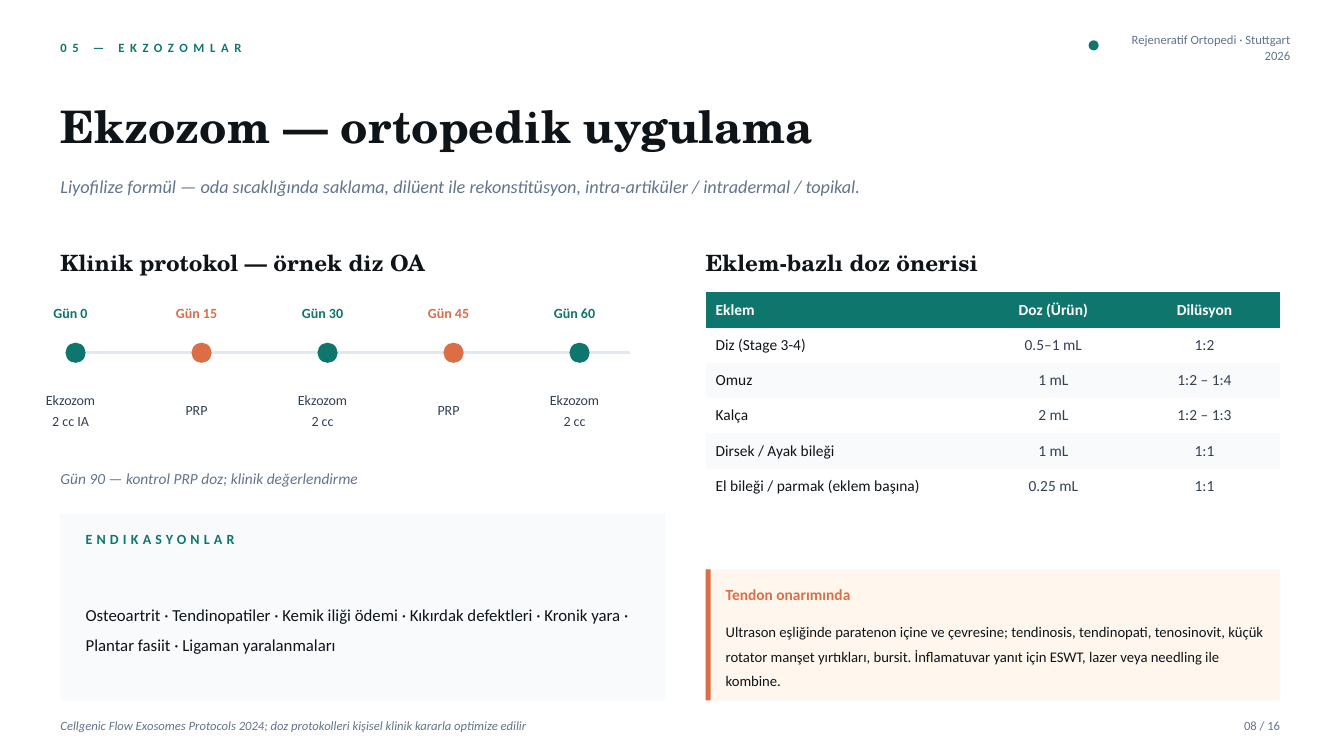
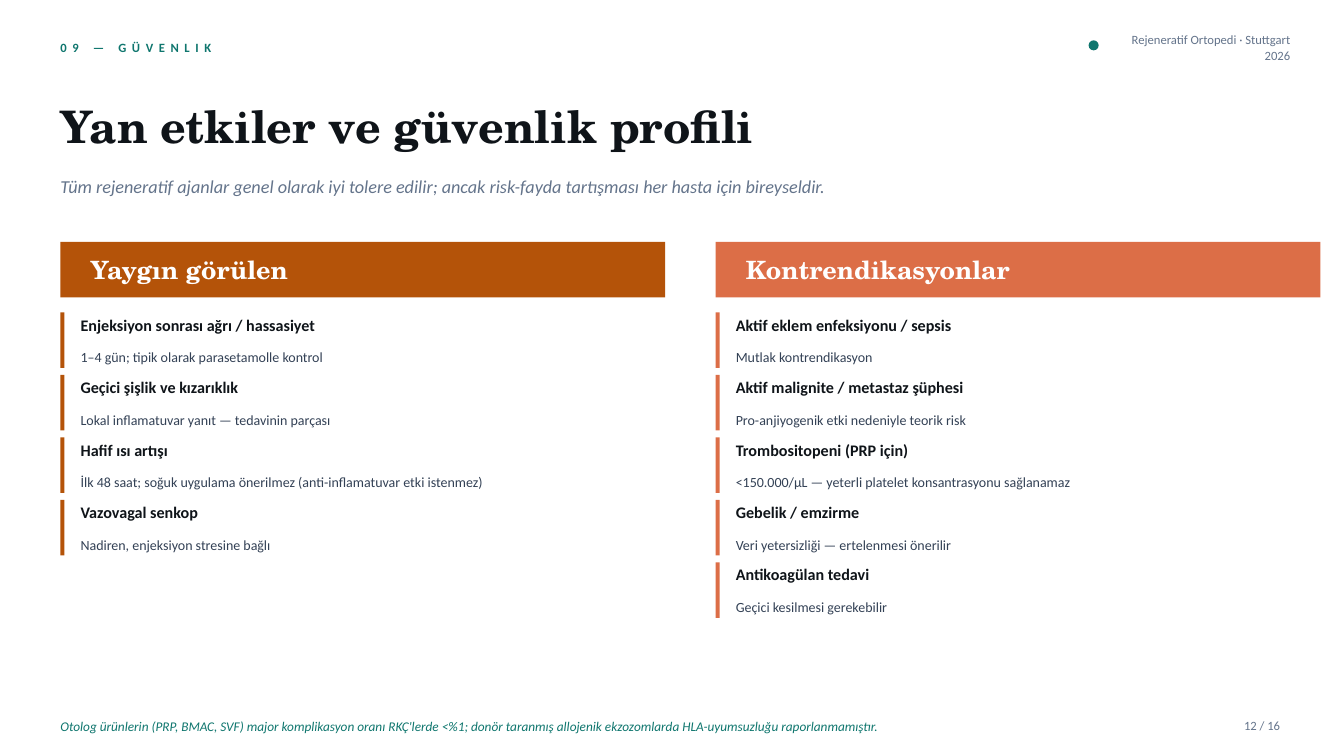
import pptx
import pptx.dml.color
import pptx.enum.shapes
import pptx.enum.text
import pptx.oxml
import pptx.oxml.ns
import pptx.util
from lxml import etree

Pt = pptx.util.Pt
SHAPES = pptx.enum.shapes.MSO_SHAPE
ALIGN = pptx.enum.text.PP_ALIGN
MIDDLE = pptx.enum.text.MSO_ANCHOR.MIDDLE

COLORS = {
    "teal": "0F766E", "orange": "DC6E47", "amber": "B45309",
    "ink": "0F1419", "body": "334155", "muted": "64748B",
    "rule": "E2E8F0", "panel": "F8FAFC", "cream": "FFF7ED", "white": "FFFFFF",
}
SERIF, SANS = "TeX Gyre Schola", "Calibri"
PLAIN_TABLE_STYLE = "{2D5ABB26-0587-4C30-8999-92F81FD0307C}"
LEFT = 43.2
FOOTER_TOP = 507.6

TIMELINE = [
    ("Gün 0", "Ekzozom\n2 cc IA", "teal"),
    ("Gün 15", "PRP", "orange"),
    ("Gün 30", "Ekzozom\n2 cc", "teal"),
    ("Gün 45", "PRP", "orange"),
    ("Gün 60", "Ekzozom\n2 cc", "teal"),
]
DOSES = [
    ("Eklem", "Doz (Ürün)", "Dilüsyon"),
    ("Diz (Stage 3-4)", "0.5–1 mL", "1:2"),
    ("Omuz", "1 mL", "1:2 – 1:4"),
    ("Kalça", "2 mL", "1:2 – 1:3"),
    ("Dirsek / Ayak bileği", "1 mL", "1:1"),
    ("El bileği / parmak (eklem başına)", "0.25 mL", "1:1"),
]
COMMON_EFFECTS = [
    ("Enjeksiyon sonrası ağrı / hassasiyet", "1–4 gün; tipik olarak parasetamolle kontrol"),
    ("Geçici şişlik ve kızarıklık", "Lokal inflamatuvar yanıt — tedavinin parçası"),
    ("Hafif ısı artışı",
     "İlk 48 saat; soğuk uygulama önerilmez (anti-inflamatuvar etki istenmez)"),
    ("Vazovagal senkop", "Nadiren, enjeksiyon stresine bağlı"),
]
CONTRAINDICATIONS = [
    ("Aktif eklem enfeksiyonu / sepsis", "Mutlak kontrendikasyon"),
    ("Aktif malignite / metastaz şüphesi", "Pro-anjiyogenik etki nedeniyle teorik risk"),
    ("Trombositopeni (PRP için)", "<150.000/μL — yeterli platelet konsantrasyonu sağlanamaz"),
    ("Gebelik / emzirme", "Veri yetersizliği — ertelenmesi önerilir"),
    ("Antikoagülan tedavi", "Geçici kesilmesi gerekebilir"),
]


def rgb(color):
    """Return the named palette colour."""
    return pptx.dml.color.RGBColor.from_string(COLORS[color])


def style_text(text_frame, size, color, font=SANS, bold=False, italic=False,
               align=ALIGN.LEFT, line_spacing=None, tracking=0):
    """Format every paragraph and run of a text frame."""
    for paragraph in text_frame.paragraphs:
        paragraph.alignment = align
        if line_spacing:
            paragraph.line_spacing = line_spacing
        for run in paragraph.runs:
            run.font.name = font
            run.font.size = Pt(size)
            run.font.bold = bold
            run.font.italic = italic
            run.font.color.rgb = rgb(color)
            if tracking:
                run._r.get_or_add_rPr().set("spc", str(tracking * 100))


def add_text(slide, box, text, size, color, **style):
    """Add a wrapped, vertically centred text box without margins."""
    text_frame = slide.shapes.add_textbox(*map(Pt, box)).text_frame
    text_frame.word_wrap = True
    text_frame.vertical_anchor = MIDDLE
    text_frame.margin_left = text_frame.margin_right = 0
    text_frame.margin_top = text_frame.margin_bottom = 0
    text_frame.text = text
    style_text(text_frame, size, color, **style)


def add_block(slide, box, color, kind=SHAPES.RECTANGLE):
    """Add a filled shape without outline or shadow."""
    shape = slide.shapes.add_shape(kind, *map(Pt, box))
    shape.shadow.inherit = False
    shape.fill.solid()
    shape.fill.fore_color.rgb = rgb(color)
    shape.line.fill.background()


def add_rule(slide, left, right, y):
    """Add a horizontal rule."""
    connector = slide.shapes.add_connector(
        pptx.enum.shapes.MSO_CONNECTOR.STRAIGHT, Pt(left), Pt(y), Pt(right), Pt(y))
    connector.line.color.rgb = rgb("rule")
    connector.line.width = Pt(2)
    etree.SubElement(connector._element.spPr, pptx.oxml.ns.qn("a:effectLst"))


def add_frame(presentation, section, title, subtitle, page):
    """Add a slide with the shared header, title and page number."""
    slide = presentation.slides.add_slide(presentation.slide_layouts[6])
    add_text(slide, (LEFT, 23.04, 576, 21.6), section, 9, "teal", bold=True, tracking=4)
    add_block(slide, (777.6, 28.8, 7.2, 7.2), "teal", SHAPES.OVAL)
    add_text(slide, (788.4, 23.04, 133.2, 21.6), "Rejeneratif Ortopedi · Stuttgart 2026",
             9, "muted", align=ALIGN.RIGHT)
    add_text(slide, (849.6, FOOTER_TOP, 64.8, 21.6), f"{page} / 16", 9, "muted",
             align=ALIGN.RIGHT)
    add_text(slide, (LEFT, 64.8, 864, 50.4), title, 32, "ink", font=SERIF, bold=True)
    add_text(slide, (LEFT, 118.8, 864, 28.8), subtitle, 13, "muted", italic=True)
    return slide


def add_footnote(slide, text, size, color):
    """Add the italic note at the foot of a slide."""
    add_text(slide, (LEFT, FOOTER_TOP, 864, 21.6), text, size, color, italic=True)


def add_heading(slide, left, top, text):
    """Add a column heading."""
    add_text(slide, (left, top, 432, 28.8), text, 16, "ink", font=SERIF, bold=True)


def add_timeline(slide, box):
    """Add the protocol timeline with evenly spaced days."""
    left, top, width, height = box
    step = 90
    add_rule(slide, left + 18, left + width - 25.2, top + 39.6)
    for index, (day, treatment, color) in enumerate(TIMELINE):
        x = left + index * step
        add_block(slide, (x + 3.6, top + 32.4, 14.4, 14.4), color, SHAPES.OVAL)
        add_text(slide, (x - 28.8, top, 72, 21.6), day, 10, color,
                 bold=True, align=ALIGN.CENTER)
        add_text(slide, (x - 28.8, top + 54, 72, height - 54), treatment, 10, "body",
                 align=ALIGN.CENTER, line_spacing=1.25)


def add_indications(slide, box):
    """Add the panel that lists the indications."""
    left, top, width, height = box
    add_block(slide, box, "panel")
    add_text(slide, (left + 18, top + 7.2, width - 36, 21.6), "ENDIKASYONLAR",
             10, "teal", bold=True, tracking=3)
    add_text(slide, (left + 18, top + 32.4, width - 36, height - 39.6),
             "Osteoartrit · Tendinopatiler · Kemik iliği ödemi · Kıkırdak defektleri · "
             "Kronik yara · Plantar fasiit · Ligaman yaralanmaları",
             12, "ink", line_spacing=1.5)


def add_dose_table(slide, box):
    """Add the dose table with a coloured header and striped rows."""
    frame = slide.shapes.add_table(len(DOSES), len(DOSES[0]), *map(Pt, box))
    for style_id in frame._element.iter(pptx.oxml.ns.qn("a:tableStyleId")):
        style_id.text = PLAIN_TABLE_STYLE
    table = frame.table
    table.horz_banding = False
    for column, width in zip(table.columns, (194.4, 108, 108)):
        column.width = Pt(width)
    for row_index, row in enumerate(DOSES):
        header = row_index == 0
        for column_index, text in enumerate(row):
            cell = table.cell(row_index, column_index)
            cell.text = text
            cell.vertical_anchor = MIDDLE
            if row_index % 2:
                cell.fill.background()
            else:
                cell.fill.solid()
                cell.fill.fore_color.rgb = rgb("teal" if header else "panel")
            first = column_index == 0
            color = "white" if header else "ink" if first else "body"
            style_text(cell.text_frame, 11, color, bold=header,
                       align=ALIGN.LEFT if first else ALIGN.CENTER)


def add_tendon_note(slide, box):
    """Add the tendon repair callout with its accent bar."""
    left, top, width, height = box
    add_block(slide, box, "cream")
    add_block(slide, (left, top, 3.6, height), "orange")
    add_text(slide, (left + 14.4, top + 7.2, width - 21.6, 21.6), "Tendon onarımında",
             11, "orange", bold=True)
    add_text(slide, (left + 14.4, top + 25.2, width - 21.6, height - 25.2),
             "Ultrason eşliğinde paratenon içine ve çevresine; tendinosis, tendinopati, "
             "tenosinovit, küçük rotator manşet yırtıkları, bursit. İnflamatuvar yanıt "
             "için ESWT, lazer veya needling ile kombine.",
             10.5, "ink", line_spacing=1.4)


def add_risk_column(slide, box, title, items, color):
    """Add a titled band and its list of marked items."""
    left, top, width, band_height = box
    add_block(slide, box, color)
    add_text(slide, (left + 21.6, top + 7.2, width - 43.2, band_height - 14.4), title,
             18, "white", font=SERIF, bold=True)
    for index, (name, detail) in enumerate(items):
        y = top + 50.4 + index * 44.64
        add_block(slide, (left, y, 2.88, 39.6), color)
        add_text(slide, (left + 14.4, y - 1.44, 403.2, 20.16), name, 11.5, "ink", bold=True)
        add_text(slide, (left + 14.4, y + 18.72, 403.2, 23.04), detail, 10, "body",
                 line_spacing=1.25)


def build_application_slide(presentation):
    """Build the slide on orthopaedic use."""
    slide = add_frame(
        presentation, "05 — EKZOZOMLAR", "Ekzozom — ortopedik uygulama",
        "Liyofilize formül — oda sıcaklığında saklama, dilüent ile rekonstitüsyon, "
        "intra-artiküler / intradermal / topikal.", "08")
    right = 504
    add_heading(slide, LEFT, 172.8, "Klinik protokol — örnek diz OA")
    add_timeline(slide, (LEFT, 212.4, 432, 104.4))
    add_text(slide, (LEFT, 331.2, 432, 21.6),
             "Gün 90 — kontrol PRP doz; klinik değerlendirme", 11, "muted", italic=True)
    add_indications(slide, (LEFT, 367.2, 432, 133.2))
    add_heading(slide, right, 172.8, "Eklem-bazlı doz önerisi")
    add_dose_table(slide, (right, 208.8, 410.4, 151.2))
    add_tendon_note(slide, (right, 406.8, 410.4, 93.6))
    add_footnote(slide, "Cellgenic Flow Exosomes Protocols 2024; doz protokolleri kişisel "
                 "klinik kararla optimize edilir", 9, "muted")


def build_safety_slide(presentation):
    """Build the slide on side effects and safety."""
    slide = add_frame(
        presentation, "09 — GÜVENLIK", "Yan etkiler ve güvenlik profili",
        "Tüm rejeneratif ajanlar genel olarak iyi tolere edilir; ancak risk-fayda "
        "tartışması her hasta için bireyseldir.", "12")
    columns = [("Yaygın görülen", COMMON_EFFECTS, "amber"),
               ("Kontrendikasyonlar", CONTRAINDICATIONS, "orange")]
    for index, column in enumerate(columns):
        add_risk_column(slide, (LEFT + index * 468, 172.8, 432, 39.6), *column)
    add_footnote(slide, "Otolog ürünlerin (PRP, BMAC, SVF) major komplikasyon oranı RKÇ'lerde "
                 "<%1; donör taranmış allojenik ekzozomlarda HLA-uyumsuzluğu "
                 "raporlanmamıştır.", 9.5, "teal")


def main():
    """Build and save the presentation."""
    presentation = pptx.Presentation()
    presentation.slide_width = Pt(960)
    presentation.slide_height = Pt(540)
    build_application_slide(presentation)
    build_safety_slide(presentation)
    presentation.save("out.pptx")


if __name__ == "__main__":
    main()
